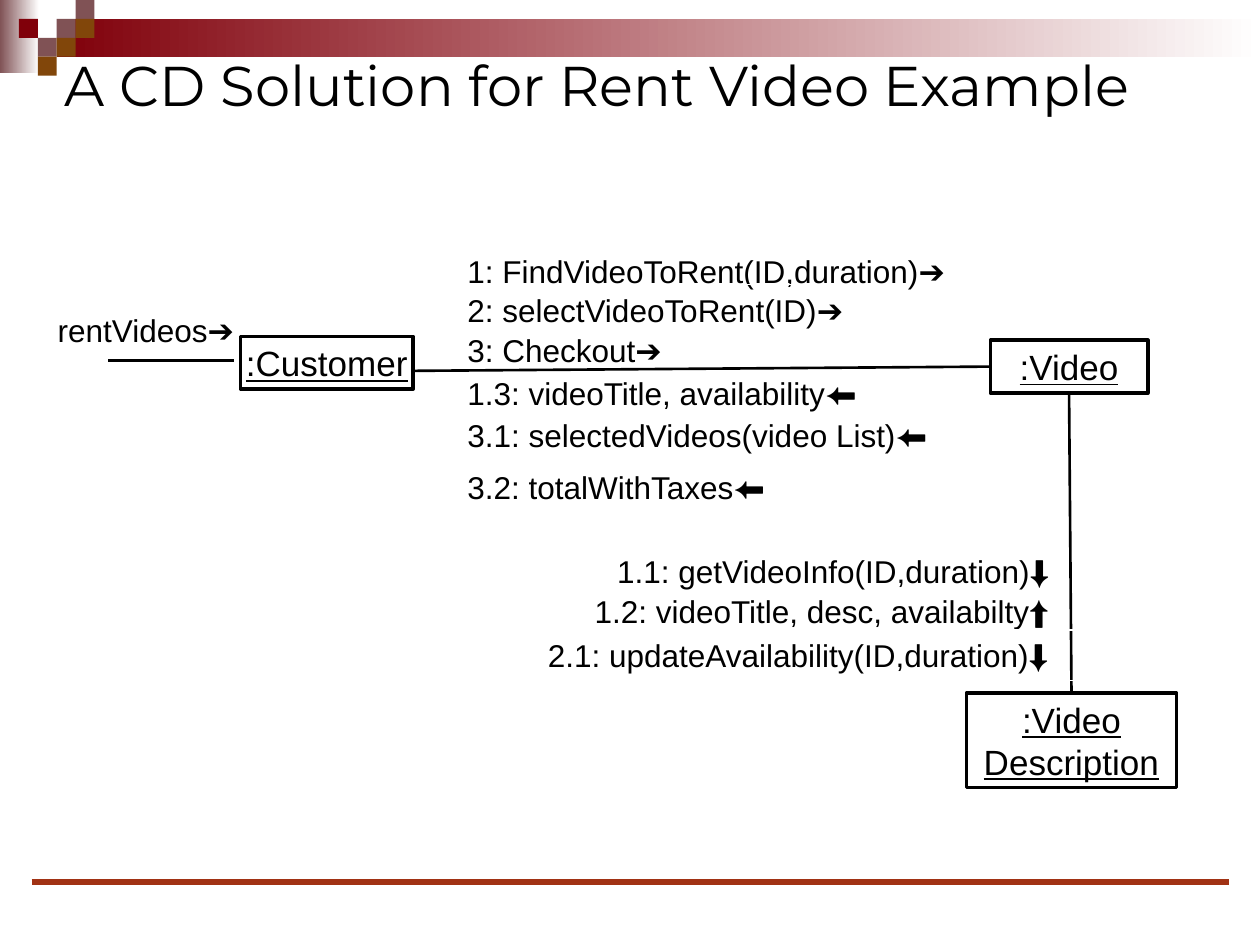
"""Build a collaboration diagram slide for the rent video example."""
from dataclasses import dataclass

from lxml.etree import SubElement
from pptx import Presentation
from pptx.dml.color import RGBColor
from pptx.enum.shapes import MSO_CONNECTOR, MSO_SHAPE
from pptx.enum.text import MSO_ANCHOR, MSO_AUTO_SIZE, PP_ALIGN
from pptx.oxml.ns import qn
from pptx.util import Pt


@dataclass(frozen=True)
class Theme:
    black: RGBColor = RGBColor(0, 0, 0)
    white: RGBColor = RGBColor(255, 255, 255)
    mauve: RGBColor = RGBColor(0x80, 0x52, 0x55)
    maroon: RGBColor = RGBColor(0x80, 0x00, 0x0A)
    brown: RGBColor = RGBColor(0x81, 0x46, 0x0A)
    rust: RGBColor = RGBColor(0xA1, 0x32, 0x14)
    title_font: str = "Montserrat"
    body_font: str = "Arial"
    title_size: int = 32
    object_size: int = 20
    message_size: int = 18


THEME = Theme()
TILE = 10.8
TILES = [
    (3, 1, THEME.mauve), (4, 0, THEME.mauve), (4, 1, THEME.brown), (2, 2, THEME.mauve),
    (1, 1, THEME.maroon), (3, 2, THEME.brown), (2, 3, THEME.brown),
]
TITLE_FORMAT = {"name": THEME.title_font, "size": Pt(THEME.title_size)}
OBJECT_FORMAT = {"name": THEME.body_font, "size": Pt(THEME.object_size), "underline": True}
MESSAGE_FORMAT = {"name": THEME.body_font, "size": Pt(THEME.message_size)}
MESSAGE_HEIGHT = 28.9
CUSTOMER_MESSAGES_LEFT = 260
CUSTOMER_MESSAGES = [
    (140.4, 294.5, "1: FindVideoToRent(ID,duration)➔"),
    (210.2, 240.5, "1.3: videoTitle, availability⬅"),
    (185.8, 131, "3: Checkout➔"),
    (264.2, 187.2, "3.2: totalWithTaxes⬅"),
    (234, 280.8, "3.1: selectedVideos(video List)⬅"),
]
DESCRIPTION_MESSAGES_RIGHT = 614.2
DESCRIPTION_MESSAGES = [
    (311.8, 268.6, "1.1: getVideoInfo(ID,duration)⬇"),
    (334.8, 281.5, "1.2: videoTitle, desc, availabilty⬆"),
]


def write(shape, lines, font_format, align=PP_ALIGN.LEFT):
    frame = shape.text_frame
    frame.text = "\n".join(lines)
    for paragraph in frame.paragraphs:
        paragraph.alignment = align
        for attribute, value in font_format.items():
            setattr(paragraph.font, attribute, value)
        paragraph.font.color.rgb = THEME.black
    return frame


def add_block(slide, left, top, width, height, color, fades=False):
    block = slide.shapes.add_shape(MSO_SHAPE.RECTANGLE, Pt(left), Pt(top), Pt(width), Pt(height))
    block.shadow.inherit = False
    block.line.fill.background()
    if fades:
        block.fill.gradient()
        block.fill.gradient_angle = 0
        for stop, stop_color in zip(block.fill.gradient_stops, (color, THEME.white)):
            stop.color.rgb = stop_color
    else:
        block.fill.solid()
        block.fill.fore_color.rgb = color


def add_title(slide, text):
    title = slide.shapes.add_textbox(Pt(30), Pt(24), Pt(690), Pt(48))
    frame = write(title, [text], TITLE_FORMAT)
    frame.word_wrap = True
    frame.vertical_anchor = MSO_ANCHOR.MIDDLE


def add_object(slide, left, top, width, height, lines, filled=False):
    box = slide.shapes.add_shape(
        MSO_SHAPE.FLOWCHART_PROCESS, Pt(left), Pt(top), Pt(width), Pt(height))
    box.shadow.inherit = False
    if filled:
        box.fill.solid()
        box.fill.fore_color.rgb = THEME.white
    else:
        box.fill.background()
    box.line.color.rgb = THEME.black
    box.line.width = Pt(2)
    frame = write(box, lines, OBJECT_FORMAT, PP_ALIGN.CENTER)
    frame.word_wrap = False
    frame.vertical_anchor = MSO_ANCHOR.MIDDLE
    return box


def add_message(slide, left, top, width, text, outlined=False):
    message = slide.shapes.add_textbox(Pt(left), Pt(top), Pt(width), Pt(MESSAGE_HEIGHT))
    frame = write(message, [text], MESSAGE_FORMAT)
    frame.word_wrap = False
    frame.auto_size = MSO_AUTO_SIZE.SHAPE_TO_FIT_TEXT
    if outlined:
        message.line.color.rgb = THEME.white
        message.line.width = Pt(0.75)


def add_link(slide, start, end, color=THEME.black, width=1.5):
    link = slide.shapes.add_connector(
        MSO_CONNECTOR.STRAIGHT, *(Pt(value) for value in (*start, *end)))
    link.line.color.rgb = color
    link.line.width = Pt(width)
    SubElement(link.element.spPr, qn("a:effectLst"))
    return link


def add_decoration(slide):
    add_block(slide, 0, 0, 22.3, 41.8, THEME.mauve, fades=True)
    add_block(slide, 32.4, TILE, 687.6, 2 * TILE, THEME.maroon, fades=True)
    for column, row, color in TILES:
        add_block(slide, column * TILE, row * TILE, TILE, TILE, color)
    add_link(slide, (18, 504), (702, 504), THEME.rust, 3)


def add_diagram(slide):
    video = add_object(slide, 565.9, 194.4, 90, 30.2, [":Video"])
    customer_link = add_link(slide, (170, 212.4), (565.9, 209.5))
    customer_link.end_connect(video, 1)
    for top, width, text in CUSTOMER_MESSAGES:
        add_message(slide, CUSTOMER_MESSAGES_LEFT, top, width, text)
    add_object(slide, 137.5, 192.2, 98.6, 30.2, [":Customer"], filled=True)
    add_link(slide, (61.9, 205.9), (133.9, 205.9))
    add_message(slide, 25.9, 174.2, 120.2, "rentVideos➔")
    description = add_object(slide, 552.2, 396, 120.2, 54, [":Video", "Description"])
    description_link = add_link(slide, (612.3, 396), (610.9, 224.6))
    description_link.begin_connect(description, 0)
    description_link.end_connect(video, 2)
    for top, width, text in DESCRIPTION_MESSAGES:
        add_message(slide, DESCRIPTION_MESSAGES_RIGHT - width, top, width, text)
    add_message(slide, CUSTOMER_MESSAGES_LEFT, 162.7, 235.4, "2: selectVideoToRent(ID)➔", True)
    add_message(slide, 306, 360, 308.2, "2.1: updateAvailability(ID,duration)⬇", True)


def main():
    deck = Presentation()
    deck.slide_width, deck.slide_height = Pt(720), Pt(540)
    slide = deck.slides.add_slide(deck.slide_layouts[6])
    add_decoration(slide)
    add_title(slide, "A CD Solution for Rent Video Example")
    add_diagram(slide)
    deck.save("out.pptx")


if __name__ == "__main__":
    main()
